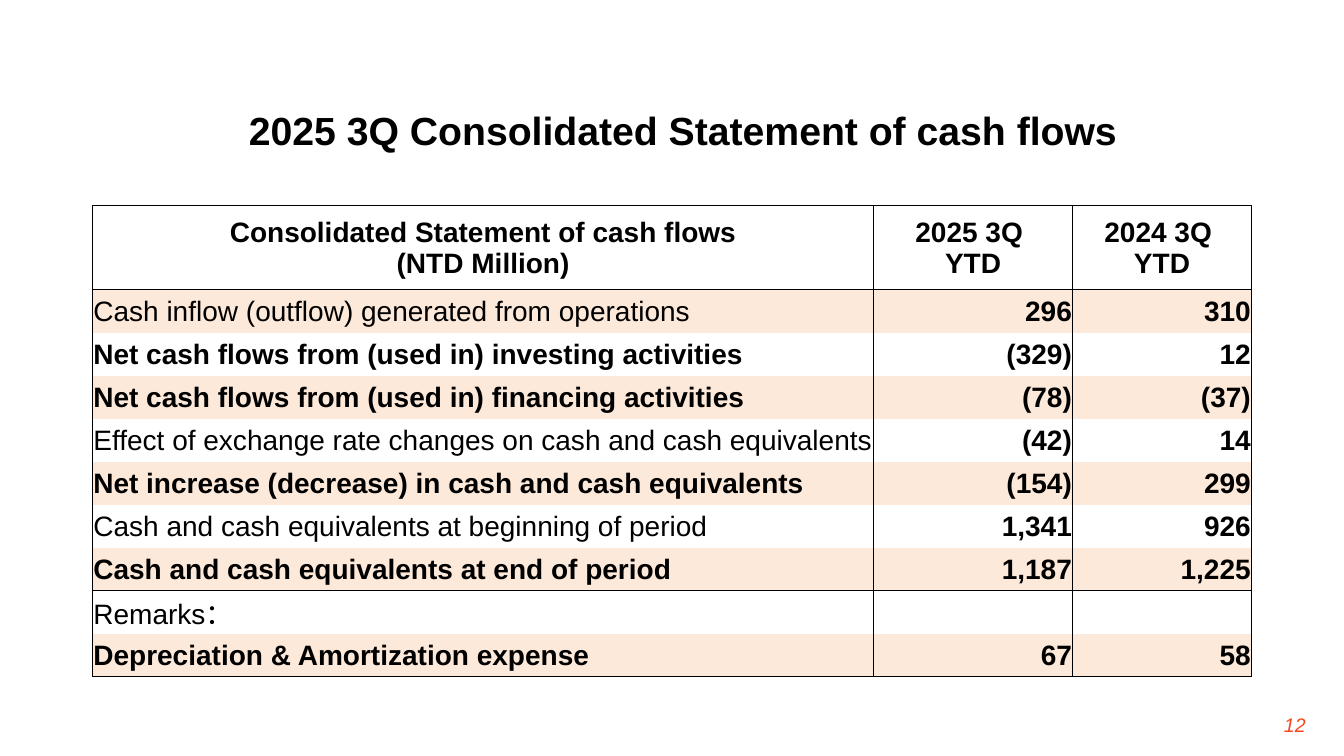
import dataclasses
import typing

import lxml.etree
import pptx
import pptx.dml.color
import pptx.enum.text
import pptx.oxml.ns
import pptx.util

Pt = pptx.util.Pt
Align = pptx.enum.text.PP_ALIGN
Anchor = pptx.enum.text.MSO_ANCHOR


@dataclasses.dataclass(frozen=True)
class Theme:
    font: str = "Arial"
    ink: str = "000000"
    paper: str = "FFFFFF"
    accent: str = "FA461E"
    band: str = "FDE9D9"
    title_size: float = 28
    table_size: float = 20
    number_size: float = 14
    border: float = 1
    cell_inset: float = 0.5


@dataclasses.dataclass(frozen=True)
class CashRow:
    label: str
    current: str
    previous: str
    bold: bool = True


THEME = Theme()
HEADINGS = (
    "Consolidated Statement of cash flows\n(NTD Million)",
    "2025 3Q \nYTD",
    "2024 3Q \nYTD",
)
CASH_ROWS = (
    CashRow("Cash inflow (outflow) generated from operations", "296", "310", False),
    CashRow("Net cash flows from (used in) investing activities", "(329)", "12"),
    CashRow("Net cash flows from (used in) financing activities", "(78)", "(37)"),
    CashRow("Effect of exchange rate changes on cash and cash equivalents", "(42)", "14", False),
    CashRow("Net increase (decrease) in cash and cash equivalents", "(154)", "299"),
    CashRow("Cash and cash equivalents at beginning of period", "1,341", "926", False),
    CashRow("Cash and cash equivalents at end of period", "1,187", "1,225"),
    CashRow("Remarks：", "", "", False),
    CashRow("Depreciation & Amortization expense", "67", "58"),
)
COLUMN_WIDTHS = (557.8, 142.2, 127.8)
HEADER_HEIGHT = 60
ROW_HEIGHT = 30.75
REMARKS_ROW = 8
RULED_ABOVE = {0, 1, REMARKS_ROW}
RULED_BELOW = {0, REMARKS_ROW - 1, len(CASH_ROWS)}


def write_text(frame: typing.Any, text: str, size: float, align: typing.Any,
               color: str = THEME.ink, bold: bool = False, italic: bool = False) -> None:
    para = frame.paragraphs[0]
    para.alignment = align
    para.font.size = Pt(size)
    for index, line in enumerate(text.split("\n")):
        if index:
            para.add_line_break()
        if not line:
            continue
        span = para.add_run()
        span.text = line
        span.font.name = THEME.font
        span.font.size = Pt(size)
        span.font.bold = bold
        span.font.italic = italic
        span.font.color.rgb = pptx.dml.color.RGBColor.from_string(color)


def paint(fill: typing.Any, color: str) -> None:
    fill.solid()
    fill.fore_color.rgb = pptx.dml.color.RGBColor.from_string(color)


def set_borders(cell: typing.Any, above: bool, below: bool) -> None:
    properties = cell._tc.get_or_add_tcPr()
    sides = (("a:lnL", True), ("a:lnR", True), ("a:lnT", above), ("a:lnB", below))
    for index, (tag, visible) in enumerate(sides):
        line = lxml.etree.Element(pptx.oxml.ns.qn(tag), w=str(Pt(THEME.border)))
        if visible:
            fill = lxml.etree.SubElement(line, pptx.oxml.ns.qn("a:solidFill"))
            lxml.etree.SubElement(fill, pptx.oxml.ns.qn("a:srgbClr"), val=THEME.ink)
        else:
            lxml.etree.SubElement(line, pptx.oxml.ns.qn("a:noFill"))
        properties.insert(index, line)


def fill_cell(cell: typing.Any, row: int, text: str, align: typing.Any, bold: bool) -> None:
    cell.margin_left = cell.margin_right = cell.margin_top = Pt(THEME.cell_inset)
    cell.margin_bottom = Pt(0)
    cell.vertical_anchor = Anchor.MIDDLE
    write_text(cell.text_frame, text, THEME.table_size, align, bold=bold)
    if row % 2:
        paint(cell.fill, THEME.band)
    else:
        cell.fill.background()
    set_borders(cell, row in RULED_ABOVE, row in RULED_BELOW)


def round_corners(shape: typing.Any, adjustment: int) -> None:
    geometry = lxml.etree.SubElement(
        shape._element.spPr, pptx.oxml.ns.qn("a:prstGeom"), prst="roundRect")
    guides = lxml.etree.SubElement(geometry, pptx.oxml.ns.qn("a:avLst"))
    lxml.etree.SubElement(guides, pptx.oxml.ns.qn("a:gd"), name="adj", fmla=f"val {adjustment}")


def add_title(page: typing.Any) -> None:
    title = page.shapes.title
    title.left, title.top, title.width, title.height = Pt(170.6), Pt(71.6), Pt(651), Pt(42)
    round_corners(title, 22700)
    paint(title.fill, THEME.paper)
    frame = title.text_frame
    frame.word_wrap = True
    frame.auto_size = pptx.enum.text.MSO_AUTO_SIZE.NONE
    frame.vertical_anchor = Anchor.MIDDLE
    write_text(frame, "2025 3Q Consolidated Statement of cash flows",
               THEME.title_size, Align.LEFT, bold=True)


def add_cash_table(page: typing.Any) -> None:
    height = HEADER_HEIGHT + ROW_HEIGHT * len(CASH_ROWS)
    table = page.shapes.add_table(
        len(CASH_ROWS) + 1, len(COLUMN_WIDTHS),
        Pt(66.2), Pt(146.9), Pt(sum(COLUMN_WIDTHS)), Pt(height)).table
    table.first_row = False
    table.horz_banding = False
    for column, width in zip(table.columns, COLUMN_WIDTHS):
        column.width = Pt(width)
    for index, row in enumerate(table.rows):
        row.height = Pt(ROW_HEIGHT if index else HEADER_HEIGHT)
    for column, heading in enumerate(HEADINGS):
        fill_cell(table.cell(0, column), 0, heading, Align.CENTER, True)
    for index, entry in enumerate(CASH_ROWS, start=1):
        fill_cell(table.cell(index, 0), index, entry.label, Align.LEFT, entry.bold)
        for column, value in enumerate((entry.current, entry.previous), start=1):
            fill_cell(table.cell(index, column), index, value, Align.RIGHT, True)


def add_page_number(page: typing.Any) -> None:
    box = page.shapes.add_textbox(Pt(885.8), Pt(505.4), Pt(54), Pt(28.8))
    box.text_frame.word_wrap = True
    write_text(box.text_frame, "12", THEME.number_size, Align.RIGHT,
               color=THEME.accent, italic=True)


def main() -> None:
    deck = pptx.Presentation()
    deck.slide_width, deck.slide_height = Pt(960), Pt(540)
    page = deck.slides.add_slide(deck.slide_layouts[5])
    add_title(page)
    add_page_number(page)
    add_cash_table(page)
    deck.save("out.pptx")


if __name__ == "__main__":
    main()
